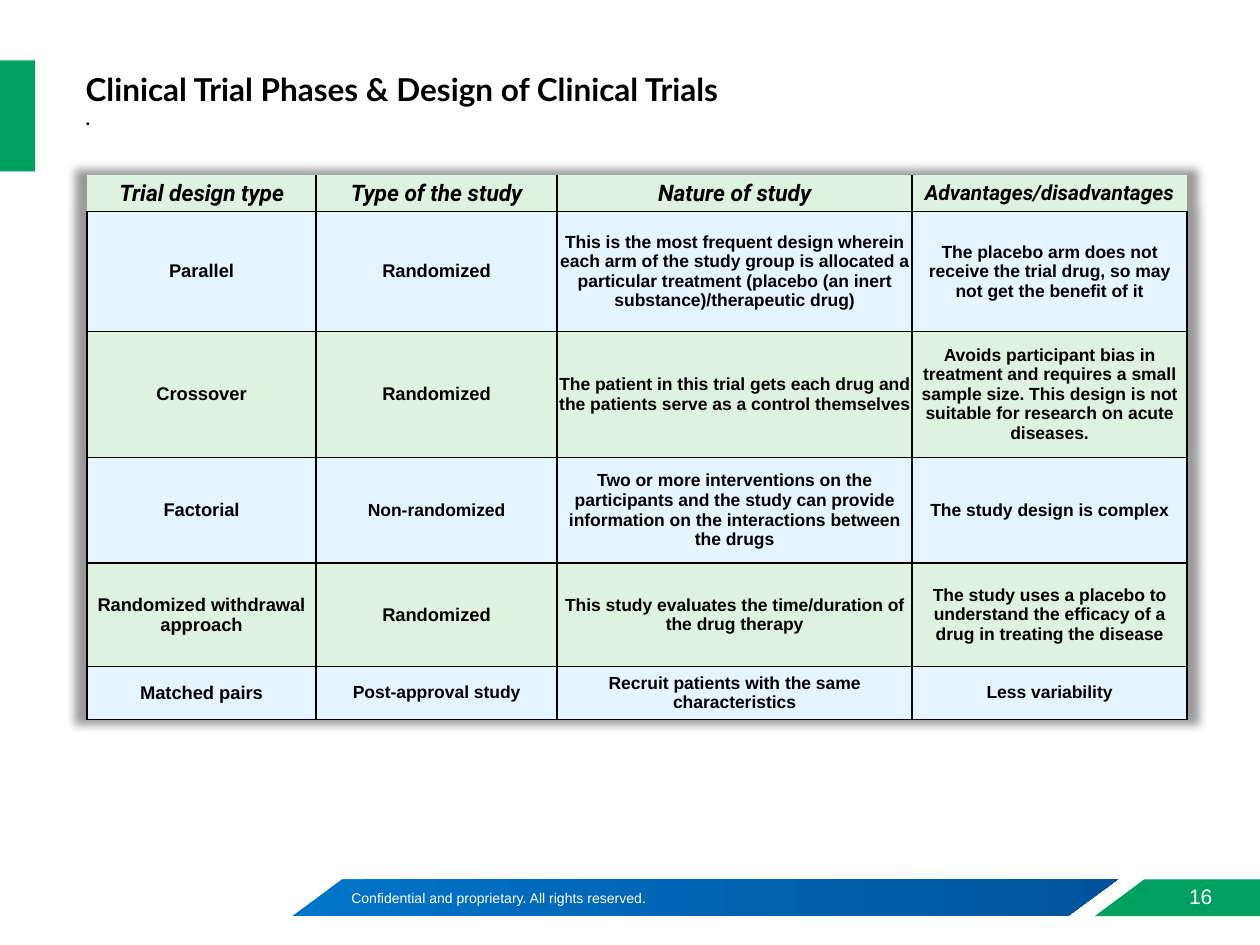
from dataclasses import dataclass

import lxml.etree
import pptx
import pptx.dml.color
import pptx.enum.shapes
import pptx.enum.text
import pptx.oxml
import pptx.oxml.ns
import pptx.util

Inches = pptx.util.Inches
Pt = pptx.util.Pt
SHAPE = pptx.enum.shapes.MSO_SHAPE
ALIGN = pptx.enum.text.PP_ALIGN
MIDDLE = pptx.enum.text.MSO_ANCHOR.MIDDLE

GREEN, PALE_GREEN, PALE_BLUE = "00A160", "DEF2DF", "E5F4FF"
BLACK, WHITE = "000000", "FFFFFF"
COLUMN_WIDTHS = [1.82, 1.91, 2.82, 2.18]
HEADERS = ["Trial design type", "Type of the study", "Nature of study",
           "Advantages/disadvantages"]
HEADER_HEIGHT = 0.29


@dataclass
class TrialDesign:
    height: float
    name: str
    study_type: str
    nature: str
    remarks: str

    def cells(self) -> list[tuple[str, float]]:
        """Texts of the row, each with its size in points."""
        type_size = 10.5 if self.study_type == "Randomized" else 10
        return [(self.name, 10.5), (self.study_type, type_size),
                (self.nature, 10), (self.remarks, 10)]


DESIGNS = [
    TrialDesign(0.95, "Parallel", "Randomized",
                "This is the most frequent design wherein each arm of the study group is "
                "allocated a particular treatment (placebo (an inert substance)/therapeutic drug)",
                "The placebo arm does not receive the trial drug, so may not get the benefit of it"),
    TrialDesign(1.0, "Crossover", "Randomized",
                "The patient in this trial gets each drug and the patients serve as a control "
                "themselves",
                "Avoids participant bias in treatment and requires a small sample size. "
                "This design is not suitable for research on acute diseases."),
    TrialDesign(0.84, "Factorial", "Non-randomized",
                "Two or more interventions on the participants and the study can provide "
                "information on the interactions between the drugs",
                "The study design is complex"),
    TrialDesign(0.82, "Randomized withdrawal approach", "Randomized",
                "This study evaluates the time/duration of the drug therapy",
                "The study uses a placebo to understand the efficacy of a drug in treating "
                "the disease"),
    TrialDesign(0.42, "Matched pairs", "Post-approval study",
                "Recruit patients with the same characteristics",
                "Less variability"),
]


def color(code: str) -> pptx.dml.color.RGBColor:
    return pptx.dml.color.RGBColor.from_string(code)


def add_span(para, text: str, *, size: float, font: str = "Arial", ink: str = BLACK,
             bold: bool = False, italic: bool = False) -> None:
    span = para.add_run()
    span.text = text
    span.font.name, span.font.size = font, Pt(size)
    span.font.bold, span.font.italic = bold, italic
    span.font.color.rgb = color(ink)


def make_plain(shape, fill: str | None = None) -> None:
    shape.shadow.inherit = False
    shape.line.fill.background()
    if fill:
        shape.fill.solid()
        shape.fill.fore_color.rgb = color(fill)


def add_label(page, text: str, left: float, top: float, width: float, height: float,
              *, size: float, align=ALIGN.LEFT) -> None:
    box = page.shapes.add_textbox(Inches(left), Inches(top), Inches(width), Inches(height))
    frame = box.text_frame
    frame.word_wrap, frame.vertical_anchor = True, MIDDLE
    frame.paragraphs[0].alignment = align
    add_span(frame.paragraphs[0], text, size=size, ink=WHITE)


def set_borders(cell, edges: str) -> None:
    """Draw the named edges (L, R, T, B) in black and clear the others."""
    properties = cell._tc.get_or_add_tcPr()
    for position, edge in enumerate("LRTB"):
        fill = (f'<a:solidFill><a:srgbClr val="{BLACK}"/></a:solidFill>'
                if edge in edges else "<a:noFill/>")
        properties.insert(position, pptx.oxml.parse_xml(
            f'<a:ln{edge} {pptx.oxml.ns.nsdecls("a")} w="{Pt(1)}">{fill}</a:ln{edge}>'))


def fill_cell(cell, text: str, *, fill: str, edges: str, **text_format) -> None:
    cell.fill.solid()
    cell.fill.fore_color.rgb = color(fill)
    cell.vertical_anchor = MIDDLE
    cell.margin_left = cell.margin_right = Inches(0.01)
    cell.margin_top = cell.margin_bottom = Inches(0.01)
    para = cell.text_frame.paragraphs[0]
    para.alignment = ALIGN.CENTER
    add_span(para, text, bold=True, **text_format)
    set_borders(cell, edges)


def add_table_shadow(table) -> None:
    table._tbl.tblPr.insert(0, pptx.oxml.parse_xml(
        f'<a:effectLst {pptx.oxml.ns.nsdecls("a")}>'
        '<a:outerShdw blurRad="63500" sx="102000" sy="102000" algn="ctr" rotWithShape="0">'
        f'<a:srgbClr val="{BLACK}"><a:alpha val="40000"/></a:srgbClr>'
        '</a:outerShdw></a:effectLst>'))


def add_design_table(page) -> None:
    heights = [HEADER_HEIGHT] + [design.height for design in DESIGNS]
    table = page.shapes.add_table(
        len(heights), len(COLUMN_WIDTHS), Inches(0.69), Inches(1.39),
        Inches(sum(COLUMN_WIDTHS)), Inches(sum(heights))).table
    table.first_row = table.horz_banding = False
    add_table_shadow(table)
    for column, width in zip(table.columns, COLUMN_WIDTHS):
        column.width = Inches(width)
    for row, height in zip(table.rows, heights):
        row.height = Inches(height)

    # Header row, open at its outer edges
    last = len(HEADERS) - 1
    for index, text in enumerate(HEADERS):
        edges = "B" + ("L" if index > 0 else "") + ("R" if index < last else "")
        fill_cell(table.cell(0, index), text, fill=PALE_GREEN, edges=edges,
                  font="Roboto", size=12 if index == last else 13, italic=True)

    # Trial designs in alternating colours
    for row, design in enumerate(DESIGNS, start=1):
        for index, (text, size) in enumerate(design.cells()):
            fill_cell(table.cell(row, index), text, size=size, edges="LRTB",
                      fill=PALE_BLUE if row % 2 else PALE_GREEN)


def add_decoration(page) -> None:
    # Blue footer band
    band = page.shapes.add_shape(SHAPE.PARALLELOGRAM, Inches(2.32), Inches(6.98),
                                 Inches(6.55), Inches(0.29))
    band.adjustments[0] = 1.36
    make_plain(band)
    band.fill.gradient()
    band.fill.gradient_angle = 0
    for stop, code in zip(band.fill.gradient_stops, ["0074C8", "00539B"]):
        stop.color.rgb = color(code)

    # Green tab beside the title
    tab = page.shapes.add_shape(SHAPE.RECTANGLE, 0, Inches(0.48), Inches(0.28), Inches(0.88))
    make_plain(tab, GREEN)

    # Green corner behind the page number
    corner = [(8.69, 7.27), (9.08, 6.98), (10, 6.98), (10, 7.27)]
    points = [(Inches(x), Inches(y)) for x, y in corner]
    builder = page.shapes.build_freeform(*points[0])
    builder.add_line_segments(points[1:], close=True)
    make_plain(builder.convert_to_shape(), GREEN)


def add_title(page) -> None:
    title = page.shapes.title
    title.left, title.top = Inches(0.58), Inches(0.37)
    title.width, title.height = Inches(8.62), Inches(0.88)
    frame = title.text_frame
    frame.word_wrap, frame.vertical_anchor = True, MIDDLE
    para = frame.paragraphs[0]
    para.alignment, para.line_spacing = ALIGN.LEFT, 0.9
    add_span(para, "Clinical Trial Phases & Design of Clinical Trials",
             size=18, font="Lato", bold=True)
    para.add_line_break()
    add_span(para, ".", size=11, font="Lato", bold=True)


def main() -> None:
    deck = pptx.Presentation()
    deck.slide_width, deck.slide_height = Inches(10), Inches(7.5)
    page = deck.slides.add_slide(deck.slide_layouts[5])
    add_decoration(page)
    add_title(page)
    add_design_table(page)
    add_label(page, "Confidential and proprietary. All rights reserved.",
              2.69, 7.01, 3.83, 0.24, size=8)
    add_label(page, "16", 9.3, 6.96, 0.46, 0.31, size=12, align=ALIGN.CENTER)
    deck.save("out.pptx")


if __name__ == "__main__":
    main()
